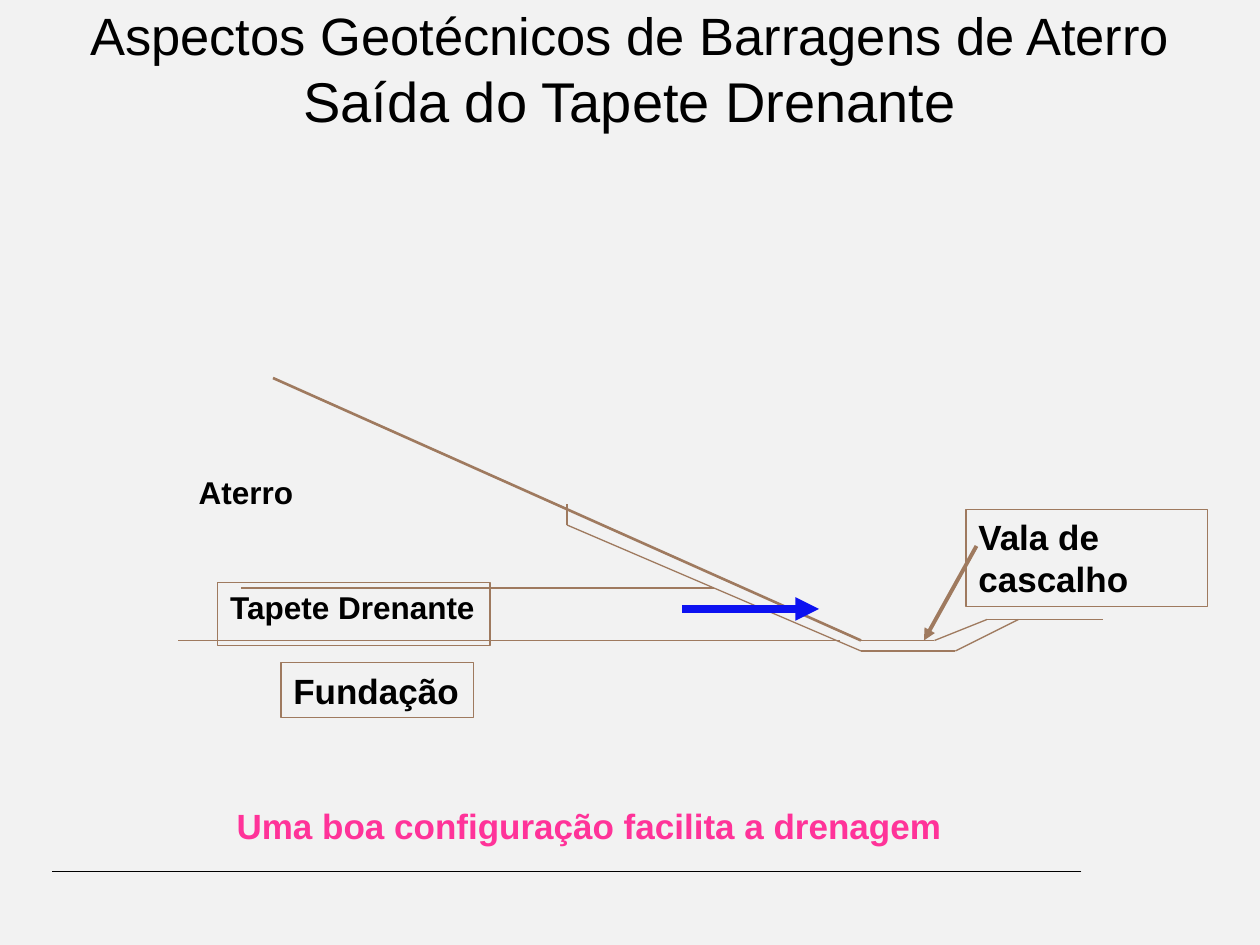
from lxml import etree
from pptx import Presentation
from pptx.dml.color import RGBColor
from pptx.enum.shapes import MSO_CONNECTOR, MSO_SHAPE
from pptx.enum.text import MSO_ANCHOR, PP_ALIGN
from pptx.oxml.ns import qn
from pptx.util import Pt

STRAIGHT = MSO_CONNECTOR.STRAIGHT
RECTANGLE = MSO_SHAPE.RECTANGLE
LEFT, CENTER = PP_ALIGN.LEFT, PP_ALIGN.CENTER
TOP, MIDDLE = MSO_ANCHOR.TOP, MSO_ANCHOR.MIDDLE
COLORS = {
    "background": "F2F2F2",
    "text": "000000",
    "soil": "9F7A5F",
    "flow": "0D12F1",
    "message": "FF3399",
}

deck = Presentation()
deck.slide_width, deck.slide_height = Pt(720), Pt(540)
page = deck.slides.add_slide(deck.slide_layouts[6])
page.background.fill.solid()
page.background.fill.fore_color.rgb = RGBColor.from_string(COLORS["background"])


def add_line(start, end, color="soil", width=0.75, arrow=False):
    line = page.shapes.add_connector(
        STRAIGHT, Pt(start[0]), Pt(start[1]), Pt(end[0]), Pt(end[1]))
    line.line.color.rgb = RGBColor.from_string(COLORS[color])
    line.line.width = Pt(width)
    if arrow:
        etree.SubElement(line.line._get_or_add_ln(), qn("a:tailEnd"), type="triangle")
    etree.SubElement(line._element.spPr, qn("a:effectLst"))


def add_text(lines, place, sizes=(20,), color="text", bold=True, align=LEFT,
             anchor=TOP, wrap=False, framed=False):
    """Write lines, split by line breaks and each with its own size, in one box."""
    area = [Pt(length) for length in place]
    if framed:
        box = page.shapes.add_shape(RECTANGLE, *area)
        box.shadow.inherit = False
        box.fill.background()
        box.line.color.rgb = RGBColor.from_string(COLORS["soil"])
        box.line.width = Pt(0.75)
    else:
        box = page.shapes.add_textbox(*area)
    frame = box.text_frame
    frame.word_wrap = wrap
    frame.vertical_anchor = anchor
    para = frame.paragraphs[0]
    para.alignment = align
    for index, (line, size) in enumerate(zip(lines, sizes)):
        if index:
            para.add_line_break()
        span = para.add_run()
        span.text = line
        span.font.name = "Arial"
        span.font.size = Pt(size)
        span.font.bold = bold
        span.font.color.rgb = RGBColor.from_string(COLORS[color])


# Footer rule
add_line((618, 498), (30, 498), color="text")

# Dam section: foundation, slope, drainage blanket and gravel ditch
add_line((102, 366), (480, 366))
add_line((492, 366), (156, 216), width=1.5)
add_line((138, 336), (408, 336))
outlines = [
    [(324, 288), (324, 300), (492, 372), (546, 372), (582, 354)],
    [(492, 366), (534, 366), (564, 354), (630, 354)],
]
for outline in outlines:
    for start, end in zip(outline, outline[1:]):
        add_line(start, end)

# Labels
add_text(["Aterro"], (106.5, 267, 69, 36), sizes=[18])
add_text(["Fundação"], (160.5, 378.75, 110, 31.5), framed=True)
add_text(["Tapete Drenante"], (124.5, 332.75, 155.5, 36), sizes=[18], framed=True)
add_text(["Vala de cascalho"], (552, 291, 138, 55.5), wrap=True, framed=True)

# Pointer to the ditch and direction of flow
add_line((558, 312), (528, 366), width=2.25, arrow=True)
add_line((390, 348), (468, 348), color="flow", width=4.5, arrow=True)

# Message and title
add_text(["Uma boa configuração facilita a drenagem"], (126.5, 456, 420.5, 31.5),
         color="message", align=CENTER)
add_text(["Aspectos Geotécnicos de Barragens de Aterro", "Saída do Tapete Drenante"],
         (0, 0, 720, 78), sizes=[30, 32], bold=False, align=CENTER, anchor=MIDDLE,
         wrap=True)

deck.save("out.pptx")
